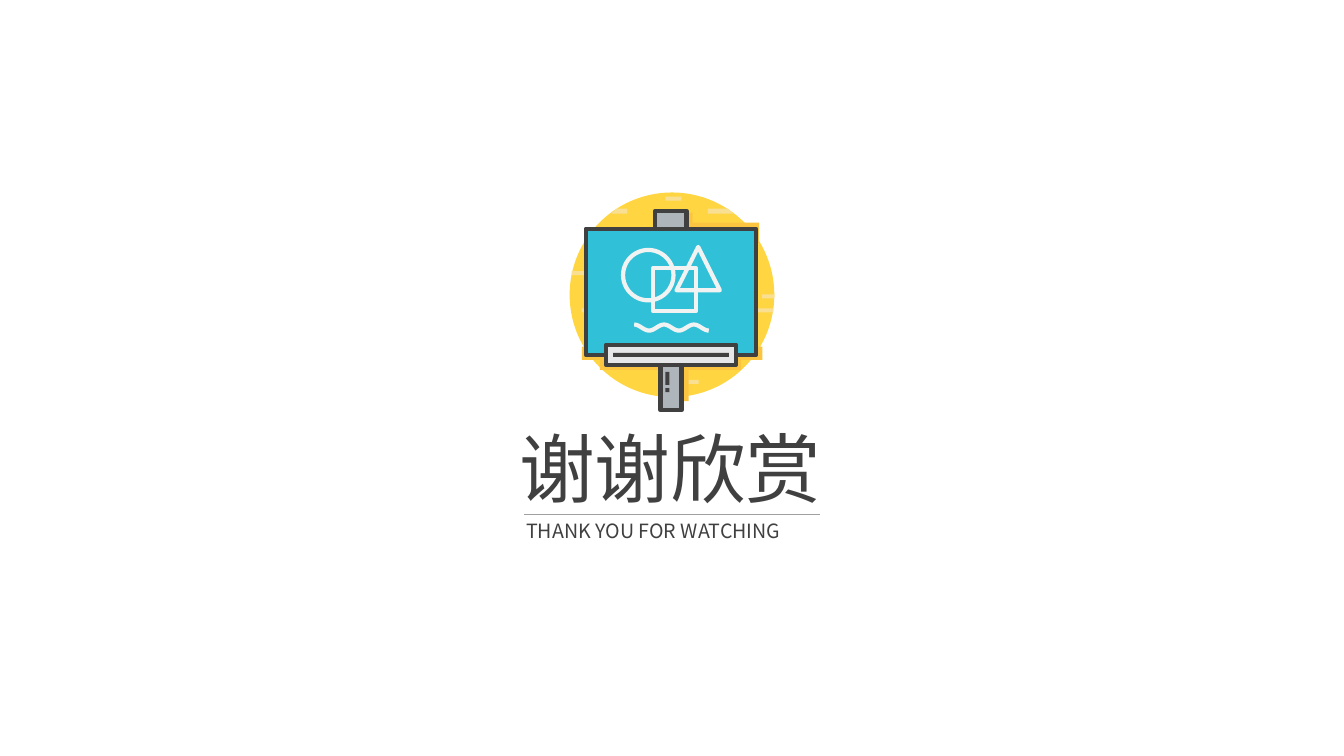
"""Build a closing thank-you slide with a drawing-board illustration."""
from math import cos, pi

from lxml import etree
from pptx import Presentation
from pptx.dml.color import RGBColor
from pptx.enum.shapes import MSO_CONNECTOR, MSO_SHAPE as SHAPE
from pptx.enum.text import MSO_AUTO_SIZE, PP_ALIGN
from pptx.oxml.ns import qn
from pptx.util import Inches, Pt

FONT = "Noto Sans CJK SC"
COLORS = {
    "sun": "FFD641", "streak": "F9DF92", "shade": "FCC541", "metal": "AFB6BB",
    "tray": "E6E7E8", "board": "30C1D8", "dark": "404041", "chalk": "F1F2F2",
    "text": "404040", "rule": "A0A0A0",
}

prs = Presentation()
prs.slide_width, prs.slide_height = Inches(13.33), Inches(7.5)
s = prs.slides.add_slide(prs.slide_layouts[6])


def paint(sp, fill=None, line=None):
    """Give a shape its fill and a 3 pt round-joined outline, or none."""
    sp.shadow.inherit = False
    if fill:
        sp.fill.solid()
        sp.fill.fore_color.rgb = RGBColor.from_string(COLORS[fill])
    else:
        sp.fill.background()
    if line:
        sp.line.color.rgb = RGBColor.from_string(COLORS[line])
        sp.line.width = Pt(3)
        etree.SubElement(sp.line._ln, qn("a:round"))
    else:
        sp.line.fill.background()


def outline(points, close=True):
    """Build a freeform through points given in inches."""
    (x, y), *rest = [(Inches(a), Inches(b)) for a, b in points]
    builder = s.shapes.build_freeform(x, y)
    builder.add_line_segments(rest, close=close)
    return builder.convert_to_shape()


sun = s.shapes.add_shape(SHAPE.OVAL, Inches(5.65), Inches(1.91), Inches(2.03), Inches(2.03))
paint(sun, "sun")

streaks = [
    (6.69, 3.77, 0.24), (7.13, 3.06, 0.54), (7.56, 2.92, 0.12), (6.6, 1.95, 0.16),
    (7.33, 3.47, 0.16), (5.77, 3.06, 0.37), (5.67, 2.69, 0.21),
]
for x, y, w in streaks:
    sp = s.shapes.add_shape(SHAPE.RECTANGLE, Inches(x), Inches(y), Inches(w), Inches(0.04))
    paint(sp, "streak")

polygons = [
    ("streak", [(6.22, 2.07), (6.12, 2.07), (6.06, 2.12), (6.22, 2.12)]),
    ("streak", [(7.22, 2.07), (7.02, 2.07), (7.02, 2.12), (7.27, 2.12)]),
    ("shade", [(5.77, 3.44), (7.56, 3.44), (7.56, 3.57), (7.35, 3.57), (7.35, 3.67),
               (6.83, 3.67), (6.83, 3.98), (6.74, 3.98), (6.74, 3.67), (5.95, 3.67),
               (5.95, 3.57), (5.77, 3.57)]),
    ("shade", [(6.72, 2.11), (6.87, 2.11), (6.87, 2.21), (7.53, 2.21), (7.53, 2.41),
               (6.72, 2.41)]),
]
for fill, points in polygons:
    paint(outline(points), fill)

easel = [
    (SHAPE.RECTANGLE, 6.55, 3.62, 0.21, 0.45, "metal", "dark"),
    (SHAPE.RECTANGLE, 6.6, 3.69, 0.04, 0.13, "dark", None),
    (SHAPE.RECTANGLE, 6.6, 3.85, 0.04, 0.04, "dark", None),
    (SHAPE.RECTANGLE, 5.81, 2.27, 1.69, 1.25, "board", "dark"),
    (SHAPE.RECTANGLE, 6.01, 3.42, 1.29, 0.2, "tray", "dark"),
    (SHAPE.RECTANGLE, 6.08, 3.5, 1.15, 0.04, "dark", None),
    (SHAPE.RECTANGLE, 6.5, 2.09, 0.31, 0.18, "metal", "dark"),
    (SHAPE.OVAL, 6.18, 2.48, 0.5, 0.5, None, "chalk"),
    (SHAPE.RECTANGLE, 6.48, 2.66, 0.42, 0.43, None, "chalk"),
    (SHAPE.ISOSCELES_TRIANGLE, 6.71, 2.45, 0.43, 0.43, None, "chalk"),
]
for kind, x, y, w, h, fill, line in easel:
    sp = s.shapes.add_shape(kind, Inches(x), Inches(y), Inches(w), Inches(h))
    paint(sp, fill, line)

steps = 50
wave = [(6.29 + 0.74 * i / steps, 3.25 - 0.03 * cos(5 * pi * i / steps))
        for i in range(steps + 1)]
paint(outline(wave, close=False), None, "chalk")

captions = [
    ("谢谢欣赏", 5.05, 4.14, 3.23, 1.01, 54, False, PP_ALIGN.LEFT),
    ("THANK YOU FOR WATCHING", 5.12, 5.1, 3.08, 0.34, 14, True, PP_ALIGN.JUSTIFY),
]
for text, x, y, w, h, size, wrap, align in captions:
    tf = s.shapes.add_textbox(Inches(x), Inches(y), Inches(w), Inches(h)).text_frame
    tf.word_wrap = wrap
    tf.auto_size = MSO_AUTO_SIZE.SHAPE_TO_FIT_TEXT
    p = tf.paragraphs[0]
    p.text = text
    p.alignment = align
    p.font.size = Pt(size)
    p.font.color.rgb = RGBColor.from_string(COLORS["text"])
    p.font.name = FONT
    etree.SubElement(p.font._rPr, qn("a:ea"), typeface=FONT)

rule = s.shapes.add_connector(MSO_CONNECTOR.STRAIGHT, Inches(5.2), Inches(5.1),
                              Inches(8.13), Inches(5.1))
rule.line.color.rgb = RGBColor.from_string(COLORS["rule"])
rule.line.width = Pt(0.5)
etree.SubElement(rule._element.spPr, qn("a:effectLst"))

prs.save("out.pptx")
